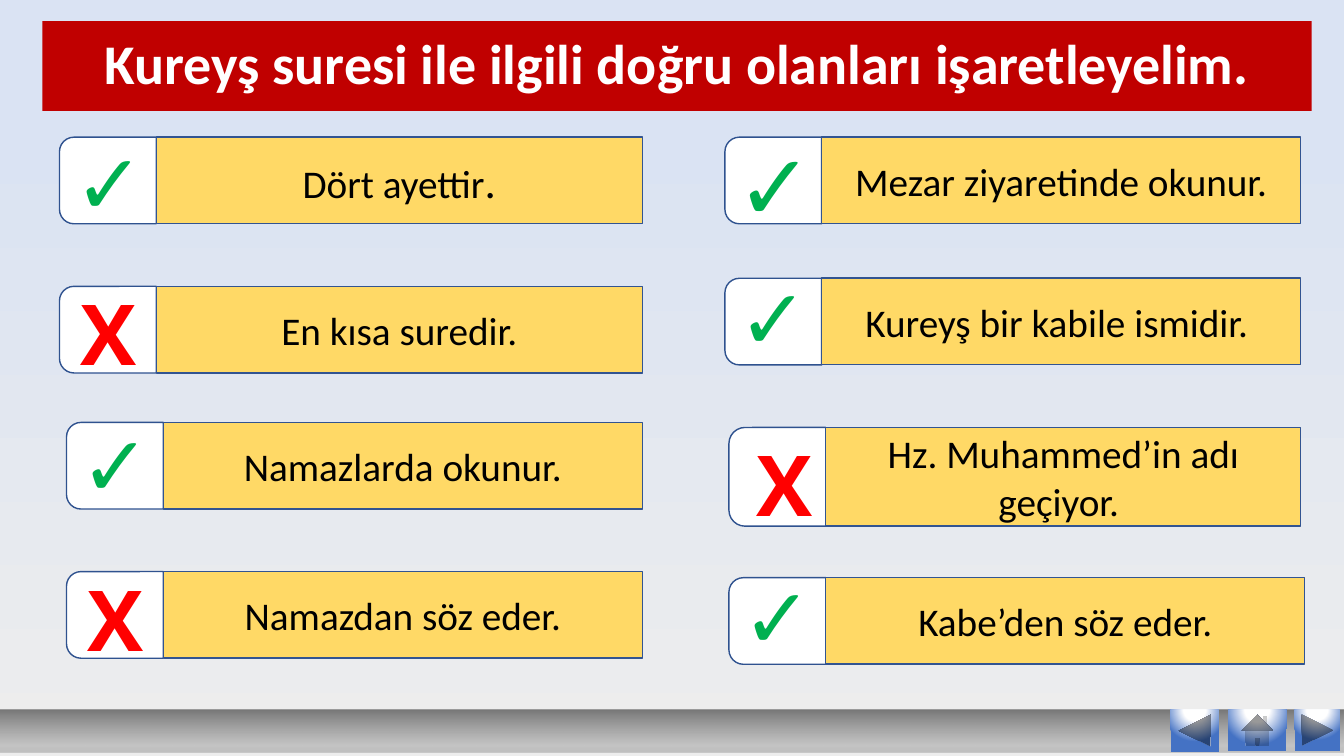
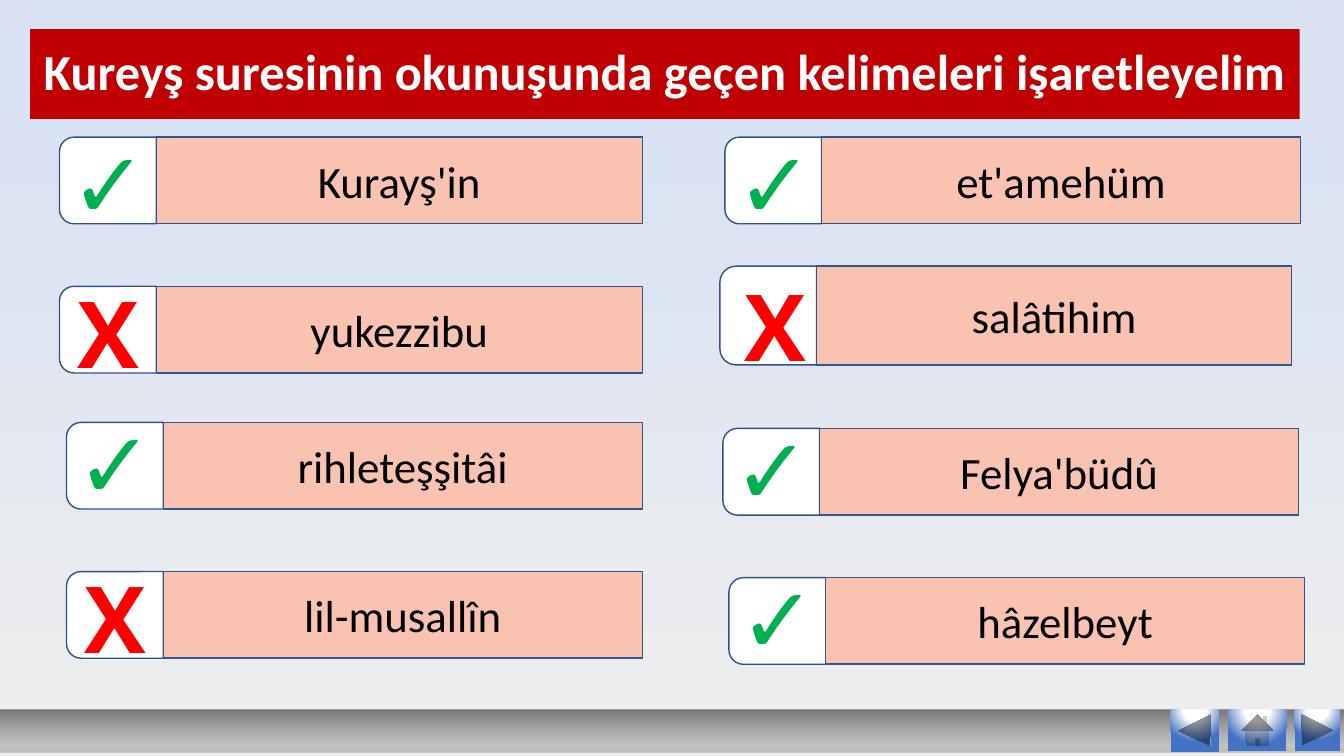
"""Build two quiz slides about the Kureyş surah with ticked and crossed answers."""
from lxml import etree
from pptx import Presentation
from pptx.dml.color import RGBColor
from pptx.enum.shapes import MSO_SHAPE
from pptx.enum.text import MSO_ANCHOR, MSO_AUTO_SIZE, PP_ALIGN
from pptx.oxml import parse_xml
from pptx.oxml.ns import nsdecls, qn
from pptx.util import Inches, Pt

WHITE = RGBColor(0xFF, 0xFF, 0xFF)
BLACK = RGBColor(0x00, 0x00, 0x00)
RED = RGBColor(0xFF, 0x00, 0x00)
GREEN = RGBColor(0x00, 0xB0, 0x50)
TITLE_RED = RGBColor(0xC0, 0x00, 0x00)
YELLOW = RGBColor(0xFF, 0xD9, 0x66)
SALMON = RGBColor(0xFA, 0xC3, 0xB1)
TAB_LINE = RGBColor(0x2F, 0x52, 0x8F)
BAR_LINE = RGBColor(0x32, 0x54, 0x91)
BLUE = RGBColor(0x44, 0x72, 0xC4)
SKY = RGBColor(0xDA, 0xE3, 0xF3)
MIST = RGBColor(0xED, 0xED, 0xED)
SILVER = RGBColor(0xC0, 0xC0, 0xC0)
GREY = RGBColor(0xB3, 0xB3, 0xB3)
DARK_GREY = RGBColor(0x77, 0x77, 0x77)

TAB_W = 0.96
MARK_W = 1.43
MARKS = {"✓": ("TeX Gyre Bonum", GREEN), "X": ("Open Sans", RED)}
LINEAR = '<a:lin %s ang="16200000" scaled="0"/>' % nsdecls("a")
CIRCLE = ('<a:path %s path="circle"><a:fillToRect l="50000" t="-80000" r="50000" '
          'b="180000"/></a:path>' % nsdecls("a"))
BAND_STOPS = [(0, SILVER, 100), (17, GREY, 70), (100, DARK_GREY, 100)]
BUTTON_STOPS = [(0, WHITE, 100), (35, WHITE, 100), (100, BLUE, 100)]
FOOTER = [
    (MSO_SHAPE.RECTANGLE, 0, 13.33, 0.42, BAND_STOPS, LINEAR),
    (MSO_SHAPE.ACTION_BUTTON_BACK_OR_PREVIOUS, 11.61, 0.48, 0.42, BUTTON_STOPS, CIRCLE),
    (MSO_SHAPE.ACTION_BUTTON_FORWARD_OR_NEXT, 12.84, 0.45, 0.41, BUTTON_STOPS, CIRCLE),
    (MSO_SHAPE.ACTION_BUTTON_HOME, 12.18, 0.58, 0.41, BUTTON_STOPS, CIRCLE),
]

SLIDES = [
    ("Kureyş suresi ile ilgili doğru olanları işaretleyelim.", 40, 0.42, 0.21, YELLOW, 28, [
        ("Dört ayettir|.", 0.59, 1.36, 4.82, 0.86, "✓", 60, 0.37, 1.25),
        ("En kısa suredir.", 0.59, 2.84, 4.82, 0.86, "X", 60, 0.36, 2.74),
        ("Namazlarda okunur.", 0.66, 4.19, 4.75, 0.86, "✓", 60, 0.43, 4.04),
        ("Namazdan söz eder.", 0.66, 5.67, 4.75, 0.86, "X", 60, 0.43, 5.58),
        ("Mezar ziyaretinde okunur.", 7.19, 1.36, 4.75, 0.86, "✓", 66, 6.97, 1.22),
        ("Hz. Muhammed’in adı geçiyor. ", 7.23, 4.24, 4.71, 0.98, "X", 60, 7.07, 4.24),
        ("Kureyş bir kabile ismidir. ", 7.19, 2.76, 4.75, 0.86, "✓", 60, 6.96, 2.58),
        ("Kabe’den söz eder.", 7.23, 5.73, 4.75, 0.86, "✓", 60, 7, 5.55),
    ]),
    ("Kureyş suresinin okunuşunda geçen kelimeleri işaretleyelim", 36, 0.3, 0.29, SALMON, 32, [
        ("Kurayş'in", 0.59, 1.36, 4.82, 0.86, "✓", 66, 0.37, 1.2),
        ("yukezzibu", 0.59, 2.84, 4.82, 0.86, "X", 66, 0.36, 2.69),
        ("rihleteşşitâi", 0.66, 4.19, 4.75, 0.86, "✓", 66, 0.43, 3.98),
        ("lil-musallîn", 0.66, 5.67, 4.75, 0.86, "X", 66, 0.43, 5.52),
        ("et'amehüm", 7.19, 1.36, 4.75, 0.86, "✓", 66, 6.97, 1.2),
        ("salâtihim", 7.14, 2.64, 4.71, 0.98, "X", 66, 6.97, 2.62),
        ("Felya'büdû", 7.17, 4.25, 4.75, 0.86, "✓", 66, 6.94, 4.04),
        ("hâzelbeyt", 7.23, 5.73, 4.75, 0.86, "✓", 66, 7, 5.52),
    ]),
]


def add_box(shapes, kind, x, y, w, h, fill=None, line=None):
    sp = shapes.add_shape(kind, Inches(x), Inches(y), Inches(w), Inches(h))
    sp.shadow.inherit = False
    if fill is not None:
        sp.fill.solid()
        sp.fill.fore_color.rgb = fill
    if line is None:
        sp.line.fill.background()
    else:
        sp.line.color.rgb = line
        sp.line.width = Pt(1)
    return sp


def style_text(p, size, color, name="Calibri", bold=False):
    p.alignment = PP_ALIGN.CENTER
    p.font.size = Pt(size)
    p.font.name = name
    p.font.bold = bold
    p.font.color.rgb = color


prs = Presentation()
prs.slide_width = Inches(13.33)
prs.slide_height = Inches(7.5)

bg = prs.slide_master.background.fill
bg.gradient()
bg.gradient_angle = 90
for stop, (pos, color) in zip(bg.gradient_stops, [(0, MIST), (0.84, SKY)]):
    stop.position = pos
    stop.color.rgb = color

for heading, heading_size, title_x, title_y, bar_color, text_size, answers in SLIDES:
    s = prs.slides.add_slide(prs.slide_layouts[5])
    title = s.shapes.title
    title.left, title.top = Inches(title_x), Inches(title_y)
    title.width, title.height = Inches(12.59), Inches(0.89)
    title.fill.solid()
    title.fill.fore_color.rgb = TITLE_RED
    tf = title.text_frame
    tf.text = heading
    tf.auto_size = MSO_AUTO_SIZE.NONE
    tf.vertical_anchor = MSO_ANCHOR.MIDDLE
    tf.paragraphs[0].line_spacing = 0.9
    style_text(tf.paragraphs[0], heading_size, WHITE, bold=True)

    for text, x, y, bar_w, h, mark, mark_size, mark_x, mark_y in answers:
        group = s.shapes.add_group_shape()
        turn = (TAB_W - h) / 2
        tab = add_box(group.shapes, MSO_SHAPE.ROUND_2_SAME_RECTANGLE,
                      x + turn, y - turn, h, TAB_W, WHITE, TAB_LINE)
        tab.rotation = 270
        bar = add_box(group.shapes, MSO_SHAPE.RECTANGLE,
                      x + TAB_W, y, bar_w, h, bar_color, BAR_LINE)
        tf = bar.text_frame
        tf.word_wrap = True
        tf.vertical_anchor = MSO_ANCHOR.MIDDLE
        p = tf.paragraphs[0]
        body, _, ending = text.partition("|")
        p.add_run().text = body
        style_text(p, text_size, BLACK)
        if ending:
            r = p.add_run()
            r.text = ending
            r.font.size = Pt(32)

        box = s.shapes.add_textbox(Inches(mark_x), Inches(mark_y), Inches(MARK_W),
                                   Inches(1.11 if mark_size == 60 else 1.21))
        tf = box.text_frame
        tf.word_wrap = True
        tf.auto_size = MSO_AUTO_SIZE.SHAPE_TO_FIT_TEXT
        tf.text = mark
        font_name, mark_color = MARKS[mark]
        style_text(tf.paragraphs[0], mark_size, mark_color, font_name, True)

    for kind, x, w, h, stops, direction in FOOTER:
        sp = add_box(s.shapes, kind, x, 7.04, w, h)
        sp.fill.gradient()
        grad = sp.fill._fill._gradFill if hasattr(sp.fill, "_fill") else None
        grad = sp._element.spPr.find(qn("a:gradFill"))
        for child in list(grad):
            grad.remove(child)
        stop_list = etree.SubElement(grad, qn("a:gsLst"))
        for pos, color, alpha in stops:
            gs = etree.SubElement(stop_list, qn("a:gs"), pos=str(pos * 1000))
            clr = etree.SubElement(gs, qn("a:srgbClr"), val=str(color))
            if alpha < 100:
                etree.SubElement(clr, qn("a:alpha"), val=str(alpha * 1000))
        grad.append(parse_xml(direction))

prs.save("out.pptx")
